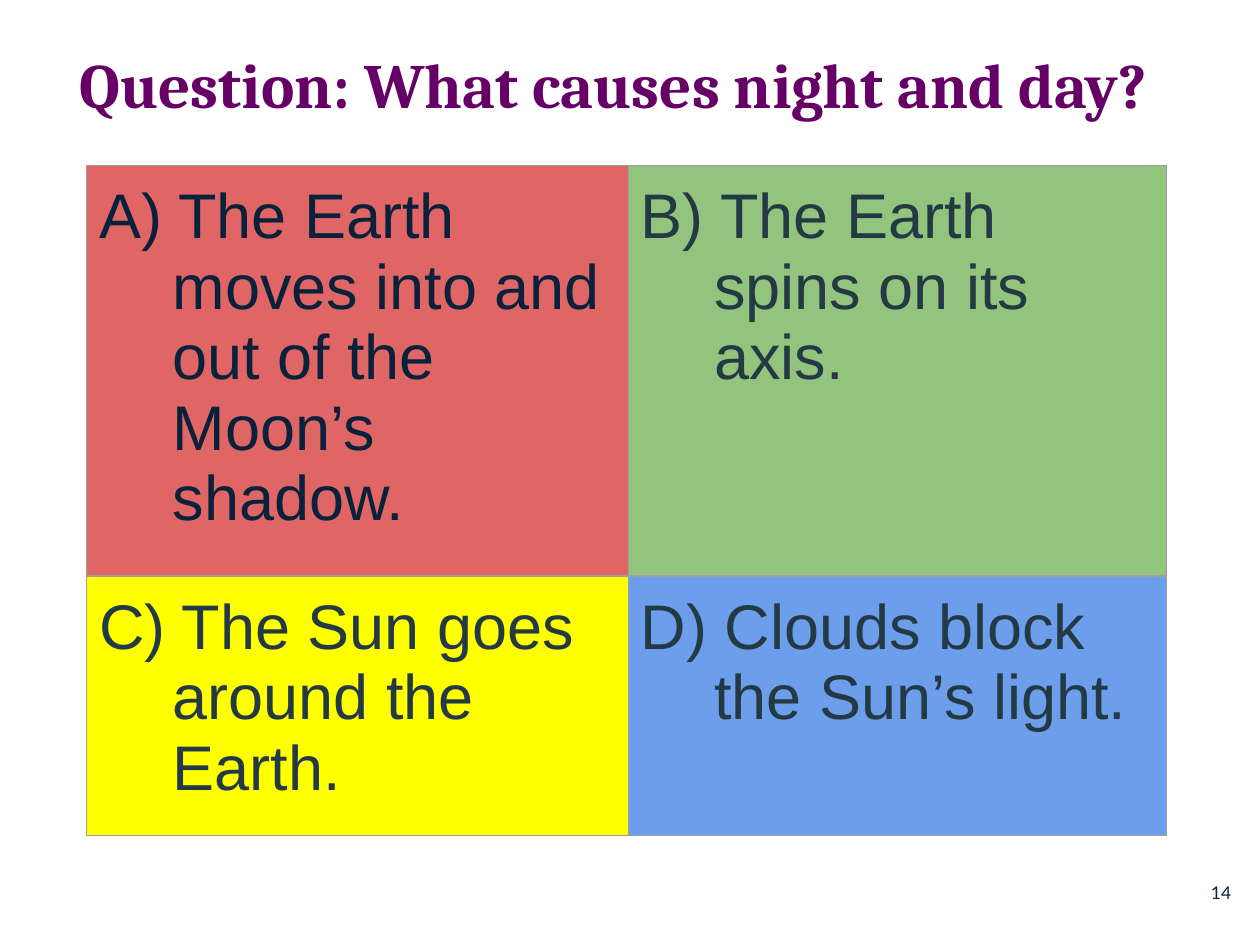
from dataclasses import dataclass

import pptx
import pptx.dml.color
import pptx.enum.text
import pptx.oxml
import pptx.oxml.ns
import pptx.util

Cm = pptx.util.Cm
Pt = pptx.util.Pt
RGB = pptx.dml.color.RGBColor.from_string
Align = pptx.enum.text.PP_ALIGN
Anchor = pptx.enum.text.MSO_ANCHOR


@dataclass(frozen=True)
class Theme:
    title_font: str = "Cambria"
    body_font: str = "Arial"
    number_font: str = "Lato"
    title_color: str = "660066"
    navy: str = "09213B"
    slate: str = "233A44"
    border: str = "9E9E9E"
    red: str = "E06666"
    green: str = "93C47D"
    yellow: str = "FFFF00"
    blue: str = "6D9EEB"
    large: float = 36
    small: float = 10
    border_width: float = 0.75


THEME = Theme()
INSET = Cm(0.25)

# Text, text colour and fill of each answer
ANSWERS = [
    [("A) The Earth moves into and out of the Moon’s shadow.", THEME.navy, THEME.red),
     ("B) The Earth spins on its axis.", THEME.slate, THEME.green)],
    [("C) The Sun goes around the Earth.", THEME.slate, THEME.yellow),
     ("D) Clouds block the Sun’s light.", THEME.slate, THEME.blue)],
]


def add_run(p, text, font, size, color, bold=False):
    r = p.add_run()
    r.text = text
    r.font.name = font
    r.font.size = Pt(size)
    r.font.bold = bold
    r.font.color.rgb = RGB(color)


def add_text(s, box, text, font, size, color, bold=False,
             align=Align.LEFT, anchor=Anchor.TOP):
    tf = s.shapes.add_textbox(*map(Cm, box)).text_frame
    tf.word_wrap = True
    tf.vertical_anchor = anchor
    tf.margin_left = tf.margin_right = tf.margin_top = tf.margin_bottom = INSET
    p = tf.paragraphs[0]
    p.alignment = align
    add_run(p, text, font, size, color, bold)


def set_borders(cell):
    tc_pr = cell._tc.get_or_add_tcPr()
    for side in ("lnL", "lnR", "lnT", "lnB"):
        tc_pr.append(pptx.oxml.parse_xml(
            f'<a:{side} {pptx.oxml.ns.nsdecls("a")} w="{Pt(THEME.border_width)}">'
            f'<a:solidFill><a:srgbClr val="{THEME.border}"/></a:solidFill></a:{side}>'))


def fill_cell(cell, text, color, fill):
    set_borders(cell)
    cell.fill.solid()
    cell.fill.fore_color.rgb = RGB(fill)
    cell.margin_left = cell.margin_right = INSET
    cell.margin_top = cell.margin_bottom = Cm(0.33)
    p = cell.text_frame.paragraphs[0]
    # Hanging indent after the answer letter
    p_pr = p._p.get_or_add_pPr()
    p_pr.set("marL", str(Cm(1.48)))
    p_pr.set("indent", str(-Cm(1.48)))
    add_run(p, text, THEME.body_font, THEME.large, color)


def add_answers(s, left, top, widths, heights):
    table = s.shapes.add_table(len(heights), len(widths), Cm(left), Cm(top),
                               Cm(sum(widths)), Cm(sum(heights))).table
    table.first_row = table.horz_banding = False
    for column, width in zip(table.columns, widths):
        column.width = Cm(width)
    for row, height, answers in zip(table.rows, heights, ANSWERS):
        row.height = Cm(height)
        for cell, answer in zip(row.cells, answers):
            fill_cell(cell, *answer)


def main():
    prs = pptx.Presentation()
    prs.slide_width, prs.slide_height = Cm(25.4), Cm(19.05)
    s = prs.slides.add_slide(prs.slide_layouts[6])

    # Question
    add_text(s, (1.35, 0.66, 22.83, 2.18), "Question: What causes night and day?",
             THEME.title_font, THEME.large, THEME.title_color, bold=True)

    # Slide number
    add_text(s, (23.55, 17.27, 1.52, 1.45), "14", THEME.number_font, THEME.small,
             THEME.navy, align=Align.RIGHT, anchor=Anchor.MIDDLE)

    # Answer grid
    add_answers(s, 1.75, 3.33, widths=(10.92, 10.85), heights=(7.42, 4.37))

    prs.save("out.pptx")


if __name__ == "__main__":
    main()
